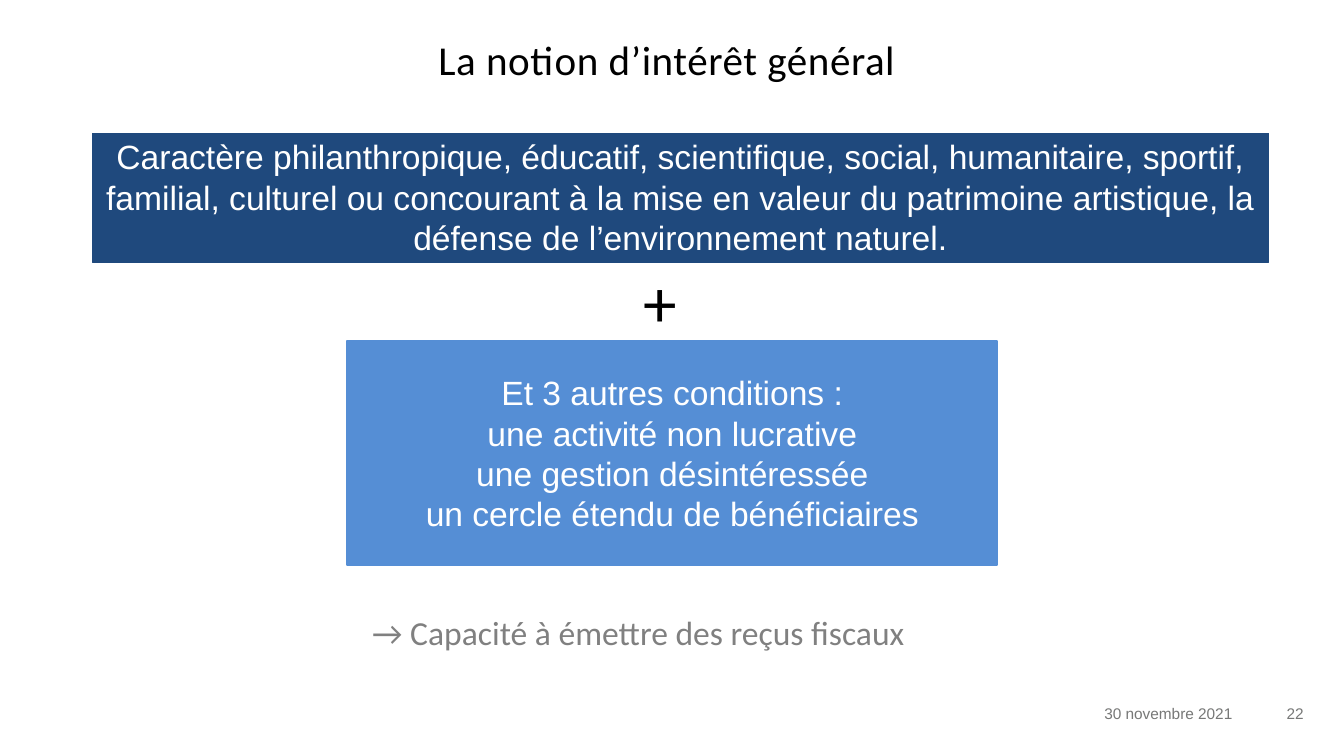
import pptx
import pptx.dml.color
import pptx.enum.shapes
import pptx.enum.text
import pptx.util

WIDE = pptx.util.Inches(20)
HIGH = pptx.util.Inches(11.25)
COL = WIDE / 100
ROW = HIGH / 100
ALIGN = pptx.enum.text.PP_ALIGN
ANCHOR = pptx.enum.text.MSO_ANCHOR


def paint(code):
    return pptx.dml.color.RGBColor.from_string(code)


def place(box):
    left, top, width, height = box
    return [int(n) for n in (left * COL, top * ROW, width * COL, height * ROW)]


def write(shape, text, size, font, hue, align, pads=(0.1, 0.05, 0.1, 0.05),
          anchor=ANCHOR.TOP, space=None, track=None):
    frame = shape.text_frame
    frame.text = text
    frame.word_wrap = True
    frame.vertical_anchor = anchor
    (frame.margin_left, frame.margin_top,
     frame.margin_right, frame.margin_bottom) = map(pptx.util.Inches, pads)
    for line in frame.paragraphs:
        line.alignment = align
        if space:
            line.line_spacing = space
        for run in line.runs:
            run.font.size = pptx.util.Pt(size)
            run.font.name = font
            run.font.color.rgb = paint(hue)
            if track:
                run.font._element.set("spc", str(track))


def label(slide, box, text, size, font, hue, align, **style):
    shape = slide.shapes.add_textbox(*place(box))
    write(shape, text, size, font, hue, align, **style)


def panel(slide, box, text, hue, edge, **style):
    kind = pptx.enum.shapes.MSO_SHAPE.RECTANGLE
    shape = slide.shapes.add_shape(kind, *place(box))
    shape.shadow.inherit = False
    shape.fill.solid()
    shape.fill.fore_color.rgb = paint(hue)
    shape.line.color.rgb = paint(hue)
    shape.line.width = pptx.util.Pt(edge)
    write(shape, text, 36, "Arial", "FFFFFF", ALIGN.CENTER, **style)


def title(slide, box):
    label(slide, box, "La notion d’intérêt général", 44, "Calibri", "000000",
          ALIGN.CENTER, pads=(0, 0, 0.15, 0.07), track=60)


def domain(slide, box):
    text = ("Caractère philanthropique, éducatif, scientifique, social, "
            "humanitaire, sportif, familial, culturel ou concourant à la mise "
            "en valeur du patrimoine artistique, la défense de "
            "l’environnement naturel.")
    panel(slide, box, text, "1F497D", 0.75)


def plus(slide, box):
    label(slide, box, "+", 72, "Calibri", "000000", ALIGN.LEFT,
          pads=(0, 0.05, 0.1, 0.05), track=60)


def terms(slide, box):
    lines = ["Et 3 autres conditions :", "une activité non lucrative",
             "une gestion désintéressée", "un cercle étendu de bénéficiaires"]
    panel(slide, box, "\n".join(lines), "558ED5", 2,
          pads=(0.15, 0.07, 0.15, 0.07), anchor=ANCHOR.MIDDLE)


def result(slide, box):
    label(slide, box, "→ Capacité à émettre des reçus fiscaux", 36, "Calibri",
          "808080", ALIGN.LEFT, space=1.5)


def footer(slide, box):
    left, top, width, height = box
    split = width * 0.82
    parts = [(left, split, "30 novembre 2021"),
             (left + split, width - split, "22")]
    for start, span, text in parts:
        label(slide, (start, top, span, height), text, 16.5, "Arial",
              "777877", ALIGN.RIGHT)


def main():
    deck = pptx.Presentation()
    deck.slide_width = WIDE
    deck.slide_height = HIGH
    slide = deck.slides.add_slide(deck.slide_layouts[6])
    footer(slide, (67.95, 92.65, 29.55, 7))
    title(slide, (2.5, 4.62, 95, 5.24))
    domain(slide, (6.85, 17.6, 87.55, 17.07))
    terms(slide, (25.85, 45.07, 48.35, 29.69))
    result(slide, (27.2, 77.87, 56.05, 8.18))
    plus(slide, (47.85, 34.04, 5.6, 11.64))
    deck.save("out.pptx")


if __name__ == "__main__":
    main()
